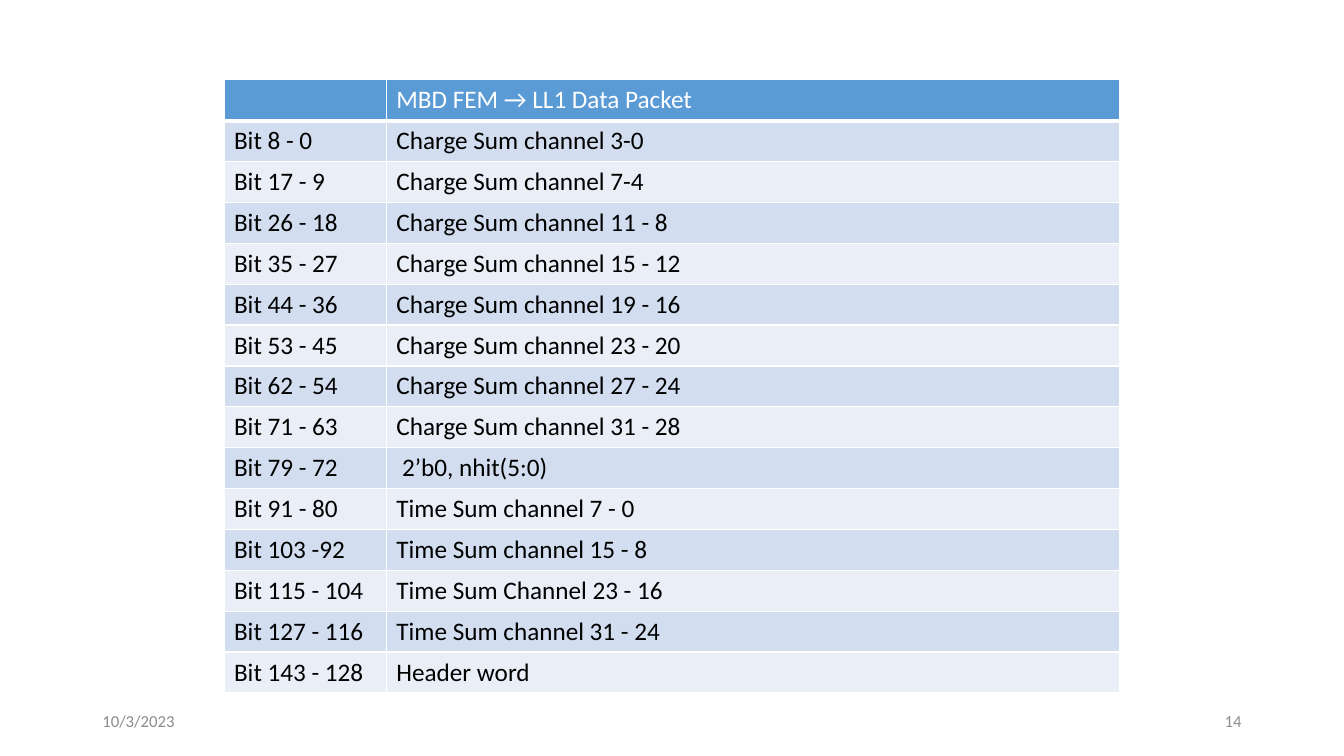
from dataclasses import dataclass

from lxml.etree import SubElement
from pptx import Presentation
from pptx.dml.color import RGBColor
from pptx.enum.text import MSO_ANCHOR, PP_ALIGN
from pptx.oxml.ns import qn
from pptx.util import Pt


@dataclass(frozen=True)
class Theme:
    font: str = "Calibri"
    body: int = 18
    small: int = 12
    white: str = "FFFFFF"
    black: str = "000000"
    gray: str = "8C8C8C"
    head: str = "5B9BD5"
    bands: tuple = ("D2DEEF", "EAEFF7")


class Deck:
    def __init__(self, theme):
        self.theme = theme
        self.file = Presentation()
        self.file.slide_width, self.file.slide_height = Pt(960), Pt(540)
        self.slide = self.file.slides.add_slide(self.file.slide_layouts[6])

    def put(self, frame, text, size, color, align=PP_ALIGN.LEFT):
        frame.text = text
        line = frame.paragraphs[0]
        line.alignment = align
        for font in [line.font] + [run.font for run in line.runs]:
            font.name = self.theme.font
            font.size = Pt(size)
            font.bold = False
            font.color.rgb = RGBColor.from_string(color)

    def label(self, left, top, width, height, text, align):
        box = self.slide.shapes.add_textbox(Pt(left), Pt(top), Pt(width), Pt(height))
        frame = box.text_frame
        frame.word_wrap = True
        frame.vertical_anchor = MSO_ANCHOR.MIDDLE
        self.put(frame, text, self.theme.small, self.theme.gray, align)

    def edge(self, cell, side, width):
        line = SubElement(cell._tc.get_or_add_tcPr(), qn(f"a:ln{side}"), w=str(Pt(width)))
        fill = SubElement(line, qn("a:solidFill"))
        SubElement(fill, qn("a:srgbClr"), val=self.theme.white)

    def table(self, left, top, widths, height, rows):
        theme = self.theme
        grid = self.slide.shapes.add_table(
            len(rows), len(widths), Pt(left), Pt(top),
            Pt(sum(widths)), Pt(height * len(rows))).table
        for col, width in zip(grid.columns, widths):
            col.width = Pt(width)
        for y, texts in enumerate(rows):
            grid.rows[y].height = Pt(height)
            fill = theme.bands[(y - 1) % 2] if y else theme.head
            color = theme.black if y else theme.white
            for x, text in enumerate(texts):
                cell = grid.cell(y, x)
                for side in "LRTB":
                    self.edge(cell, side, 3 if y == 0 and side == "B" else 1)
                cell.fill.solid()
                cell.fill.fore_color.rgb = RGBColor.from_string(fill)
                self.put(cell.text_frame, text, theme.body, color)


ROWS = [
    ("", "MBD FEM → LL1 Data Packet"),
    ("Bit 8 - 0", "Charge Sum channel 3-0"),
    ("Bit 17 - 9", "Charge Sum channel 7-4"),
    ("Bit 26 - 18", "Charge Sum channel 11 - 8"),
    ("Bit 35 - 27", "Charge Sum channel 15 - 12"),
    ("Bit 44 - 36", "Charge Sum channel 19 - 16"),
    ("Bit 53 - 45", "Charge Sum channel 23 - 20"),
    ("Bit 62 - 54", "Charge Sum channel 27 - 24"),
    ("Bit 71 - 63", "Charge Sum channel 31 - 28"),
    ("Bit 79 - 72", " 2’b0, nhit(5:0)"),
    ("Bit 91 - 80", "Time Sum channel 7 - 0"),
    ("Bit 103 -92", "Time Sum channel 15 - 8"),
    ("Bit 115 - 104", "Time Sum Channel 23 - 16"),
    ("Bit 127 - 116", "Time Sum channel 31 - 24"),
    ("Bit 143 - 128", "Header word"),
]


def main():
    deck = Deck(Theme())
    deck.table(160, 57, (116, 524), 29.2, ROWS)
    deck.label(66, 500.5, 216, 28.8, "10/3/2023", PP_ALIGN.LEFT)
    deck.label(678, 500.5, 216, 28.8, "14", PP_ALIGN.RIGHT)
    deck.file.save("out.pptx")


if __name__ == "__main__":
    main()
